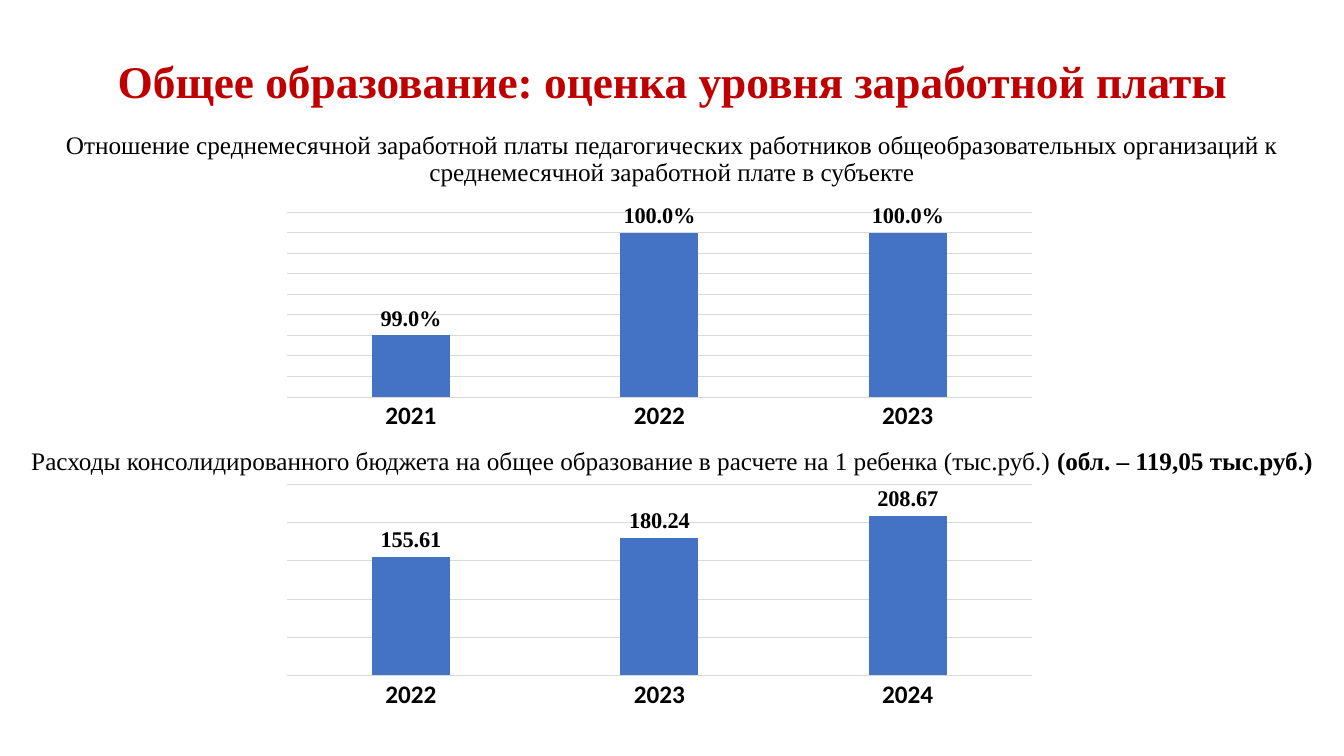
from dataclasses import dataclass

from lxml.etree import SubElement
from pptx import Presentation
from pptx.chart.data import CategoryChartData as ChartData
from pptx.dml.color import RGBColor as Color
from pptx.enum.chart import XL_CHART_TYPE as ChartType
from pptx.enum.chart import XL_LABEL_POSITION as LabelPosition
from pptx.enum.chart import XL_TICK_MARK as TickMark
from pptx.enum.text import MSO_ANCHOR as Anchor
from pptx.enum.text import PP_ALIGN as Align
from pptx.oxml.ns import qn
from pptx.util import Inches, Pt

WIDTH, HEIGHT = 13.33, 7.5


@dataclass(frozen=True)
class Theme:
    title: Color = Color(0xC0, 0x00, 0x00)
    text: Color = Color(0x00, 0x00, 0x00)
    bar: Color = Color(0x44, 0x72, 0xC4)
    grid: Color = Color(0xD9, 0xD9, 0xD9)
    serif: str = "Times New Roman"
    sans: str = "Calibri"
    title_size: float = 32.4
    caption_size: float = 18
    year_size: float = 18
    label_size: float = 16
    chart_size: float = 10


THEME = Theme()

# Both charts share one column; text spans nearly the whole slide
CHART_LEFT, CHART_WIDTH = 2.69, 7.7
CAPTION_LEFT, CAPTION_WIDTH = 0.16, 13.01


def style_font(font, name, size, color=THEME.text, bold=False):
    font.name = name
    font.size = Pt(size)
    font.bold = bold
    font.color.rgb = color


def style_line(line):
    line.color.rgb = THEME.grid
    line.width = Pt(0.75)


def add_text(slide, box, parts, size, color=THEME.text, anchor=Anchor.TOP):
    """Add a centred paragraph made of (text, bold) parts."""
    shape = slide.shapes.add_textbox(*map(Inches, box))
    frame = shape.text_frame
    frame.word_wrap = True
    frame.vertical_anchor = anchor
    paragraph = frame.paragraphs[0]
    paragraph.alignment = Align.CENTER
    paragraph.line_spacing = 0.9
    for text, bold in parts:
        run = paragraph.add_run()
        run.text = text
        style_font(run.font, THEME.serif, size, color, bold)


def set_plot_layout(chart, top, height):
    """Place the inner plot area, in shares of the chart's size."""
    plot_area = chart._chartSpace.chart.plotArea
    for old_layout in plot_area.findall(qn("c:layout")):
        plot_area.remove(old_layout)
    layout = plot_area.makeelement(qn("c:layout"))
    plot_area.insert(0, layout)
    manual = SubElement(layout, qn("c:manualLayout"))
    settings = {"layoutTarget": "inner", "xMode": "edge", "yMode": "edge",
                "x": 0.02, "y": top, "w": 0.96, "h": height}
    for name, value in settings.items():
        SubElement(manual, qn(f"c:{name}")).set("val", str(value))


def add_bar_chart(slide, top, height, years, values, number_format, scale, plot):
    data = ChartData(number_format=number_format)
    data.categories = years
    data.add_series("Series 1", values)
    box = map(Inches, (CHART_LEFT, top, CHART_WIDTH, height))
    chart = slide.shapes.add_chart(ChartType.COLUMN_CLUSTERED, *box, data).chart
    chart.has_legend = False
    chart.has_title = False
    style_font(chart.font, THEME.sans, THEME.chart_size)
    set_plot_layout(chart, *plot)

    # Bars and their labels
    bars = chart.plots[0]
    bars.gap_width = 219
    bars.overlap = -27
    bars.vary_by_categories = False
    fill = bars.series[0].format.fill
    fill.solid()
    fill.fore_color.rgb = THEME.bar
    bars.has_data_labels = True
    labels = bars.data_labels
    labels.show_value = True
    labels.position = LabelPosition.OUTSIDE_END
    labels.number_format = number_format
    labels.number_format_is_linked = False
    style_font(labels.font, THEME.serif, THEME.label_size, bold=True)

    # Axes
    year_axis = chart.category_axis
    year_axis.major_tick_mark = TickMark.NONE
    year_axis.minor_tick_mark = TickMark.NONE
    style_font(year_axis.tick_labels.font, THEME.sans, THEME.year_size, bold=True)
    style_line(year_axis.format.line)
    value_axis = chart.value_axis
    value_axis.visible = False
    value_axis.minimum_scale, value_axis.maximum_scale, value_axis.major_unit = scale
    value_axis.has_major_gridlines = True
    style_line(value_axis.major_gridlines.format.line)


def main():
    presentation = Presentation()
    presentation.slide_width = Inches(WIDTH)
    presentation.slide_height = Inches(HEIGHT)
    slide = presentation.slides.add_slide(presentation.slide_layouts[6])

    # Title
    add_text(slide, (0.92, 0.4, 11.5, 0.87),
             [("Общее образование: оценка уровня заработной платы", True)],
             THEME.title_size, THEME.title, Anchor.MIDDLE)

    # Pay of teachers against the regional average
    add_text(slide, (CAPTION_LEFT, 1.27, CAPTION_WIDTH, 0.65),
             [("Отношение среднемесячной заработной платы педагогических работников "
               "общеобразовательных организаций к среднемесячной заработной плате "
               "в субъекте", False)],
             THEME.caption_size)
    add_bar_chart(slide, 2.02, 2.31, ("2021", "2022", "2023"), (0.99, 1, 1),
                  "0.0%", (0.984, 1.002, 0.002), (0.03, 0.8))

    # Spending per child
    add_text(slide, (CAPTION_LEFT, 4.4, CAPTION_WIDTH, 0.36),
             [("Расходы консолидированного бюджета на общее образование "
               "в расчете на 1 ребенка (тыс.руб.) ", False),
              ("(обл. – 119,05 тыс.руб.)", True)],
             THEME.caption_size)
    add_bar_chart(slide, 4.76, 2.34, ("2022", "2023", "2024"),
                  (155.61, 180.24, 208.67), "0.00", (0, 250, 50), (0.02, 0.81))

    presentation.save("out.pptx")


if __name__ == "__main__":
    main()
